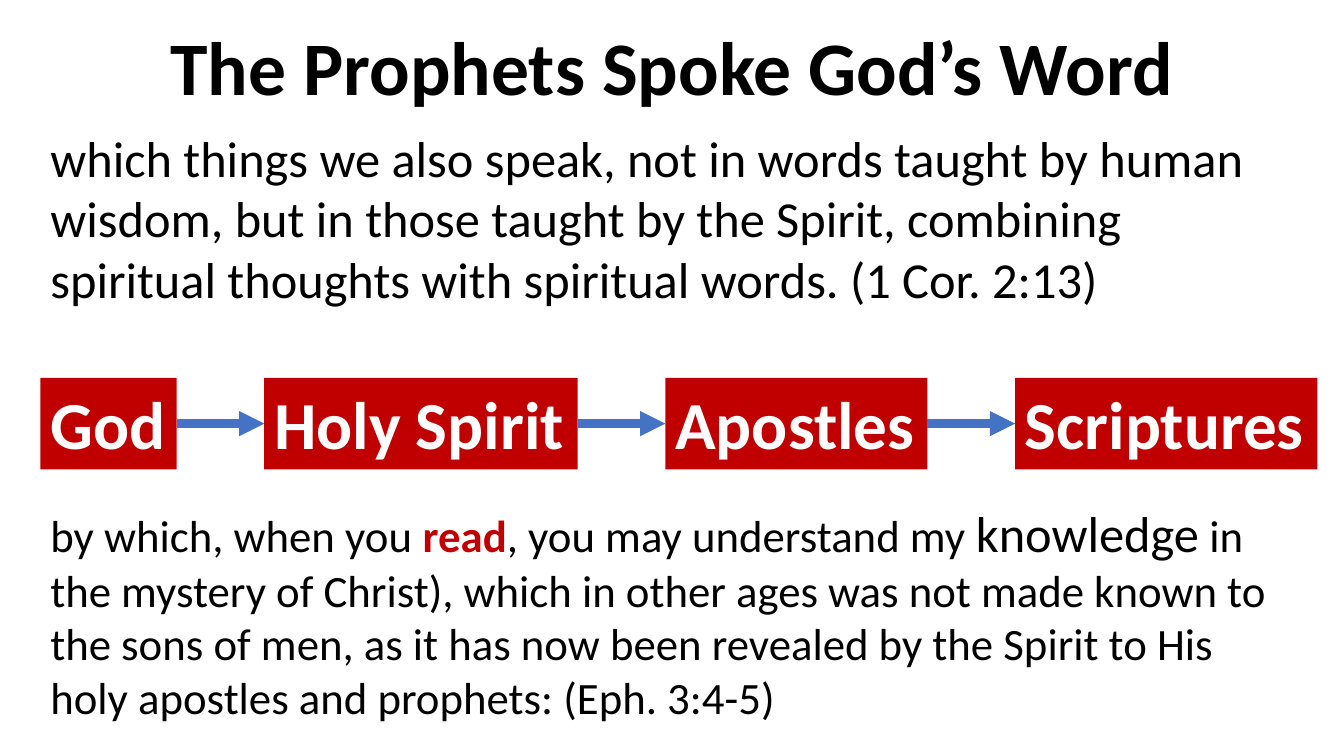
import dataclasses
import typing

import pptx
import pptx.dml.color
import pptx.enum.dml
import pptx.enum.shapes
import pptx.enum.text
import pptx.oxml.ns
import pptx.oxml.xmlchemy
import pptx.util
import lxml.etree

Cm = pptx.util.Cm
Align = pptx.enum.text.PP_ALIGN
Anchor = pptx.enum.text.MSO_ANCHOR
Fit = pptx.enum.text.MSO_AUTO_SIZE


@dataclasses.dataclass(frozen=True)
class Theme:
    font: str = "Calibri"
    black: str = "000000"
    white: str = "FFFFFF"
    red: str = "C00000"
    blue: str = "4472C4"
    title: int = 54
    step: int = 48
    large: int = 36
    body: int = 32
    arrow: int = 6


THEME = Theme()


@dataclasses.dataclass(frozen=True)
class Run:
    text: str
    size: int
    color: str = THEME.black
    bold: bool = False


@dataclasses.dataclass(frozen=True)
class Verse:
    top: float
    height: float
    runs: tuple[Run, ...]


@dataclasses.dataclass(frozen=True)
class Step:
    name: str
    width: float


LEFT = 1.02
VERSE_WIDTH = 31.37
STEP_TOP = 9.52
STEP_HEIGHT = 2.31
GAP = 2.21

TITLE = Run("The Prophets Spoke God’s Word", THEME.title, bold=True)

VERSES = (
    Verse(3.07, 4.88, (
        Run("which things we also speak, not in words taught by human wisdom, "
            "but in those taught by the Spirit, combining spiritual thoughts "
            "with spiritual words. (1 Cor. 2:13)", THEME.large),
    )),
    Verse(12.52, 5.89, (
        Run("by which, when you ", THEME.body),
        Run("read", THEME.body, THEME.red, True),
        Run(", you may understand my ", THEME.body),
        Run("knowledge", THEME.large),
        Run(" in the mystery of Christ), which in other ages was not made "
            "known to the sons of men, as it has now been revealed by the "
            "Spirit to His holy apostles and prophets: (Eph. 3:4-5)", THEME.body),
    )),
)

STEPS = (
    Step("God", 3.43),
    Step("Holy Spirit", 7.9),
    Step("Apostles", 6.6),
    Step("Scriptures", 7.62),
)


def rgb(code: str) -> pptx.dml.color.RGBColor:
    return pptx.dml.color.RGBColor.from_string(code)


def write(frame: typing.Any, runs: typing.Iterable[Run], align: Align = Align.LEFT) -> None:
    para = frame.paragraphs[0]
    para.alignment = align
    for item in runs:
        run = para.add_run()
        run.text = item.text
        run.font.name = THEME.font
        run.font.size = pptx.util.Pt(item.size)
        run.font.bold = item.bold
        run.font.color.rgb = rgb(item.color)


def add_title(slide: typing.Any) -> None:
    title = slide.shapes.title
    title.left, title.top = Cm(2.33), Cm(0.43)
    title.width, title.height = Cm(29.21), Cm(2.72)
    frame = title.text_frame
    frame.auto_size = Fit.NONE
    frame.vertical_anchor = Anchor.MIDDLE
    write(frame, [TITLE], Align.CENTER)
    frame.paragraphs[0].line_spacing = 0.9


def add_verse(slide: typing.Any, verse: Verse) -> None:
    box = slide.shapes.add_textbox(Cm(LEFT), Cm(verse.top), Cm(VERSE_WIDTH), Cm(verse.height))
    frame = box.text_frame
    frame.word_wrap = True
    frame.auto_size = Fit.SHAPE_TO_FIT_TEXT
    write(frame, verse.runs)


def add_step(slide: typing.Any, step: Step, left: float) -> typing.Any:
    box = slide.shapes.add_shape(
        pptx.enum.shapes.MSO_SHAPE.RECTANGLE,
        Cm(left), Cm(STEP_TOP), Cm(step.width), Cm(STEP_HEIGHT))
    box.shadow.inherit = False
    box.fill.solid()
    box.fill.fore_color.rgb = rgb(THEME.red)
    box.line.fill.background()
    frame = box.text_frame
    frame.word_wrap = False
    frame.auto_size = Fit.SHAPE_TO_FIT_TEXT
    frame.vertical_anchor = Anchor.TOP
    write(frame, [Run(step.name, THEME.step, THEME.white, True)])
    return box


def add_arrow(slide: typing.Any, start: typing.Any, end: typing.Any) -> None:
    """Join the right side of one step to the left side of the next."""
    arrow = slide.shapes.add_connector(pptx.enum.shapes.MSO_CONNECTOR.STRAIGHT, 0, 0, 0, 0)
    arrow.begin_connect(start, 3)
    arrow.end_connect(end, 1)
    arrow.line.color.rgb = rgb(THEME.blue)
    arrow.line.width = pptx.util.Pt(THEME.arrow)
    qn = pptx.oxml.ns.qn
    props = arrow.line._get_or_add_ln()
    lxml.etree.SubElement(props, qn("a:tailEnd"), type="triangle")
    lxml.etree.SubElement(arrow._element.spPr, qn("a:effectLst"))


def add_chain(slide: typing.Any) -> None:
    boxes = []
    left = LEFT
    for step in STEPS:
        boxes.append(add_step(slide, step, left))
        left += step.width + GAP
    for start, end in zip(boxes, boxes[1:]):
        add_arrow(slide, start, end)


def main() -> None:
    deck = pptx.Presentation()
    deck.slide_width, deck.slide_height = Cm(33.87), Cm(19.05)
    slide = deck.slides.add_slide(deck.slide_layouts.get_by_name("Title Only"))
    above, below = VERSES
    add_title(slide)
    add_verse(slide, above)
    add_chain(slide)
    add_verse(slide, below)
    deck.save("out.pptx")


if __name__ == "__main__":
    main()
